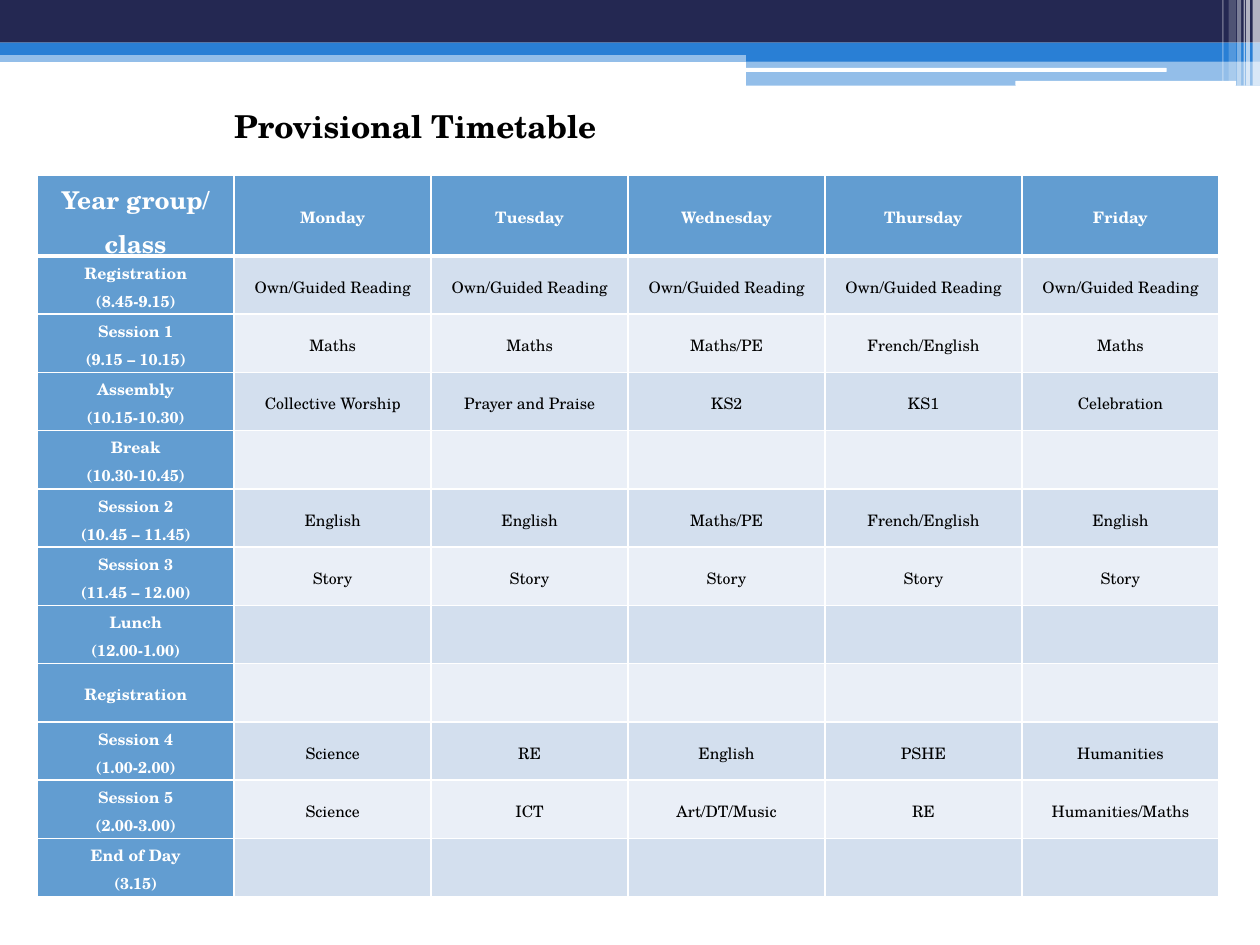
"""Build a slide with a provisional weekly school timetable."""
from lxml.etree import SubElement
from pptx import Presentation
from pptx.dml.color import RGBColor
from pptx.enum.shapes import MSO_SHAPE
from pptx.enum.text import MSO_ANCHOR, MSO_AUTO_SIZE, PP_ALIGN
from pptx.oxml.ns import qn
from pptx.util import Cm, Pt

COLOURS = {
    "navy": "242852",
    "blue": "297FD5",
    "header": "629DD1",
    "odd": "D3DFEE",
    "even": "EAEFF7",
    "white": "FFFFFF",
    "black": "000000",
}
FORMATS = {
    "title": {"size": Pt(18), "bold": True},
    "corner": {"size": Pt(14), "bold": True},
    "heading": {"size": Pt(9), "bold": True},
    "lesson": {"size": Pt(9), "bold": False},
}
CELL_FORMAT = {
    "vertical_anchor": MSO_ANCHOR.MIDDLE,
    "margin_left": Cm(0.16),
    "margin_right": Cm(0.16),
    "margin_top": 0,
    "margin_bottom": 0,
}
PARAGRAPH_FORMAT = {"alignment": PP_ALIGN.CENTER, "line_spacing": 1.15}
TITLE_FORMAT = {"word_wrap": True, "auto_size": MSO_AUTO_SIZE.SHAPE_TO_FIT_TEXT}

BANDS = [
    (0, 1.02, 25.4, 0.23, "blue", 50),
    (0, 0, 25.4, 0.86, "navy", 100),
    (0, 0.86, 25.4, 0.25, "blue", 100),
    (15.04, 0.99, 10.36, 0.25, "blue", 100),
    (15.04, 1.22, 10.36, 0.51, "blue", 50),
]
HIGHLIGHTS = [(15.01, 1.37, 8.51, 0.08), (20.47, 1.63, 4.45, 0.1)]
STRIPES = [
    (25.25, 0.15, 1.73, 65),
    (25.12, 0.08, 1.73, 65),
    (25.07, 0.03, 1.73, 60),
    (24.94, 0.08, 1.73, 40),
    (24.77, 0.15, 1.63, 20),
    (24.64, 0.03, 1.63, 30),
]
TIMETABLE = [
    ["Year group/ class", "Monday", "Tuesday", "Wednesday", "Thursday", "Friday"],
    ["Registration\n(8.45-9.15)"] + ["Own/Guided Reading"] * 5,
    ["Session 1\n(9.15 – 10.15)", "Maths", "Maths", "Maths/PE", "French/English", "Maths"],
    ["Assembly\n(10.15-10.30)", "Collective Worship", "Prayer and Praise", "KS2", "KS1", "Celebration"],
    ["Break\n(10.30-10.45)"] + [""] * 5,
    ["Session 2\n(10.45 – 11.45)", "English", "English", "Maths/PE", "French/English", "English"],
    ["Session 3\n(11.45 – 12.00)"] + ["Story"] * 5,
    ["Lunch\n(12.00-1.00)"] + [""] * 5,
    ["Registration"] + [""] * 5,
    ["Session 4\n(1.00-2.00)", "Science", "RE", "English", "PSHE", "Humanities"],
    ["Session 5\n(2.00-3.00)", "Science", "ICT", "Art/DT/Music", "RE", "Humanities/Maths"],
    ["End of Day\n(3.15)"] + [""] * 5,
]


def apply(target, values):
    for attribute, value in values.items():
        setattr(target, attribute, value)


class TimetableSlide:
    font_name = "TeX Gyre Schola"

    def __init__(self, slide):
        self.slide = slide

    def paint(self, fill, colour):
        fill.solid()
        fill.fore_color.rgb = RGBColor.from_string(COLOURS[colour])

    def style(self, font, kind, colour):
        apply(font, {"name": self.font_name, **FORMATS[kind]})
        font.color.rgb = RGBColor.from_string(COLOURS[colour])

    def band(self, left, top, width, height, colour, opacity=100, outline=MSO_SHAPE.RECTANGLE):
        band = self.slide.shapes.add_shape(outline, Cm(left), Cm(top), Cm(width), Cm(height))
        band.shadow.inherit = False
        band.line.fill.background()
        self.paint(band.fill, colour)
        if opacity < 100:
            tint = band.fill._xPr.find(qn("a:solidFill"))[0]
            SubElement(tint, qn("a:alpha"), val=str(opacity * 1000))

    def title(self, wording, left, top, width, height):
        title = self.slide.shapes.add_textbox(Cm(left), Cm(top), Cm(width), Cm(height))
        apply(title.text_frame, TITLE_FORMAT)
        heading = title.text_frame.paragraphs[0].add_run()
        heading.text = wording
        self.style(heading.font, "title", "black")

    def border(self, cell, widths):
        properties = cell._tc.get_or_add_tcPr()
        for side, points in zip("LRTB", widths):
            edge = SubElement(properties, qn(f"a:ln{side}"), w=str(Pt(points)))
            SubElement(SubElement(edge, qn("a:solidFill")), qn("a:srgbClr"), val=COLOURS["white"])

    def cell(self, cell, wording, row, column):
        apply(cell, CELL_FORMAT)
        self.border(cell, (1, 1, 3 if row == 1 else 1, 3 if row == 0 else 1))
        is_heading = row == 0 or column == 0
        self.paint(cell.fill, "header" if is_heading else "odd" if row % 2 else "even")
        kind = "corner" if row == column == 0 else "heading" if is_heading else "lesson"
        cell.text_frame.text = wording
        for paragraph in cell.text_frame.paragraphs:
            apply(paragraph, PARAGRAPH_FORMAT)
            for run in paragraph.runs:
                self.style(run.font, kind, "white" if is_heading else "black")

    def timetable(self, sessions, left, top, width, height, header_height):
        rows, columns = len(sessions), len(sessions[0])
        timetable = self.slide.shapes.add_table(
            rows, columns, Cm(left), Cm(top), Cm(width), Cm(height)
        ).table
        session_height = (height - header_height) / (rows - 1)
        for row, session in enumerate(sessions):
            timetable.rows[row].height = Cm(session_height if row else header_height)
            for column, wording in enumerate(session):
                self.cell(timetable.cell(row, column), wording, row, column)


def main():
    presentation = Presentation()
    apply(presentation, {"slide_width": Cm(25.4), "slide_height": Cm(19.05)})
    page = TimetableSlide(presentation.slides.add_slide(presentation.slide_layouts[6]))
    for band in BANDS:
        page.band(*band)
    for highlight in HIGHLIGHTS:
        page.band(*highlight, "white", outline=MSO_SHAPE.ROUNDED_RECTANGLE)
    for left, width, height, opacity in STRIPES:
        page.band(left, 0, width, height, "white", opacity)
    page.title("Provisional Timetable", 4.47, 2.03, 17.78, 1.02)
    page.timetable(TIMETABLE, 0.75, 3.53, 23.82, 14.55, 1.63)
    presentation.save("out.pptx")


if __name__ == "__main__":
    main()
